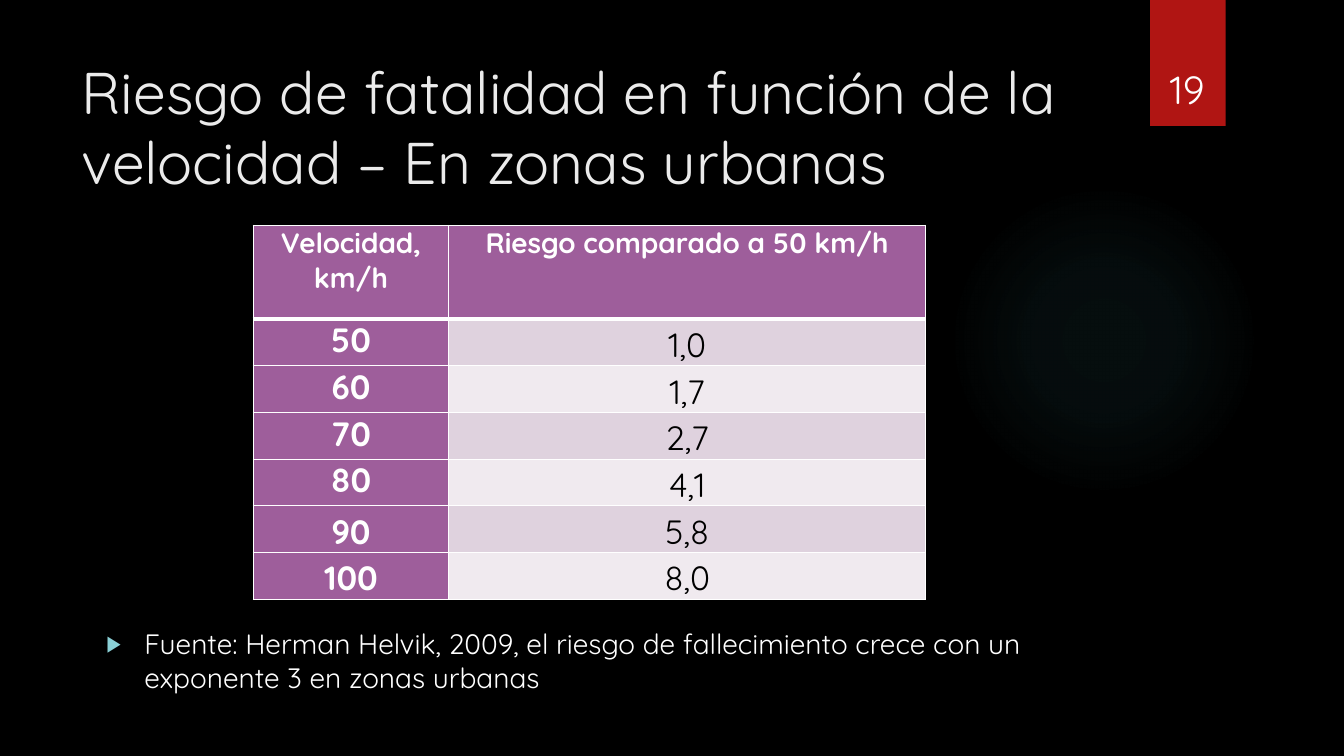
from dataclasses import dataclass

import pptx
import pptx.dml.color
import pptx.enum.shapes
import pptx.enum.text
import pptx.oxml
import pptx.oxml.ns
import pptx.util
from lxml import etree

Pt = pptx.util.Pt
RGBColor = pptx.dml.color.RGBColor
Anchor = pptx.enum.text.MSO_ANCHOR
Align = pptx.enum.text.PP_ALIGN
Shape = pptx.enum.shapes.MSO_SHAPE
qn = pptx.oxml.ns.qn

FONT = "Quicksand"
BLACK = RGBColor(0x00, 0x00, 0x00)
WHITE = RGBColor(0xFF, 0xFF, 0xFF)
OFF_WHITE = RGBColor(0xEB, 0xEB, 0xEB)
RED = RGBColor(0xB0, 0x15, 0x13)
TEAL = RGBColor(0x50, 0xB9, 0xC1)
BULLET_BLUE = RGBColor(0x8A, 0xD0, 0xD6)
PURPLE = RGBColor(0x9E, 0x5E, 0x9B)
BANDS = (RGBColor(0xDF, 0xD2, 0xDE), RGBColor(0xF0, 0xEA, 0xEF))

HEADINGS = ("Velocidad, km/h", "Riesgo comparado a 50 km/h")
RISKS = (("50", "1,0"), ("60", "1,7"), ("70", "2,7"),
         ("80", "4,1"), ("90", "5,8"), ("100", "8,0"))
COLUMN_WIDTHS = (139.7, 340.6)
HEADER_HEIGHT, ROW_HEIGHT = 67, 33.36
FIRST_BOTTOM_ROW = 5  # from here on the speeds also sit at the cell bottom
GLOW_STOPS = ((0, 7), (36, 6), (69, 0))  # position and opacity, percent


@dataclass(frozen=True)
class Frame:
    left: float
    top: float
    width: float
    height: float

    def lengths(self) -> tuple:
        return Pt(self.left), Pt(self.top), Pt(self.width), Pt(self.height)


@dataclass(frozen=True)
class Label:
    text: str
    size: float
    color: RGBColor = WHITE
    bold: bool = False
    align: Align = Align.LEFT


@dataclass(frozen=True)
class CellLook:
    fill: RGBColor
    top_line: float
    bottom_line: float
    at_bottom: bool


def write(text_frame, label: Label) -> None:
    text_frame.text = label.text
    para = text_frame.paragraphs[0]
    para.alignment = label.align
    font = para.runs[0].font
    font.name, font.size, font.bold = FONT, Pt(label.size), label.bold
    font.color.rgb = label.color


def add_text(page, frame: Frame, label: Label, anchor: Anchor = Anchor.TOP):
    box = page.shapes.add_textbox(*frame.lengths())
    box.text_frame.word_wrap = True
    box.text_frame.vertical_anchor = anchor
    write(box.text_frame, label)
    return box


def add_plain_shape(page, kind: Shape, frame: Frame):
    shape = page.shapes.add_shape(kind, *frame.lengths())
    shape.shadow.inherit = False
    shape.line.fill.background()
    return shape


def add_glow(page, frame: Frame) -> None:
    """Ellipse with a radial fill that fades out."""
    glow = add_plain_shape(page, Shape.OVAL, frame)
    stops = "".join(
        f'<a:gs pos="{position * 1000}"><a:srgbClr val="{TEAL}">'
        f'<a:alpha val="{opacity * 1000}"/></a:srgbClr></a:gs>'
        for position, opacity in GLOW_STOPS)
    gradient = pptx.oxml.parse_xml(
        f'<a:gradFill {pptx.oxml.ns.nsdecls("a")} rotWithShape="1">'
        f'<a:gsLst>{stops}</a:gsLst><a:path path="circle">'
        '<a:fillToRect l="50000" t="50000" r="50000" b="50000"/>'
        '</a:path></a:gradFill>')
    glow.element.spPr.find(qn("a:prstGeom")).addnext(gradient)


def add_bullet(para, indent: float) -> None:
    properties = para._p.get_or_add_pPr()
    properties.set("marL", str(int(Pt(indent))))
    properties.set("indent", str(int(Pt(-indent))))
    color = etree.SubElement(properties, qn("a:buClr"))
    etree.SubElement(color, qn("a:srgbClr"), val=str(BULLET_BLUE))
    etree.SubElement(properties, qn("a:buSzPct"), val="80000")
    etree.SubElement(properties, qn("a:buFont"), typeface="Arial")
    etree.SubElement(properties, qn("a:buChar"), char="▶")


def style_cell(cell, look: CellLook) -> None:
    side, top = (0.72, 0.72) if look.at_bottom else (5, 0)
    cell.margin_left = cell.margin_right = Pt(side)
    cell.margin_top, cell.margin_bottom = Pt(top), Pt(0)
    cell.vertical_anchor = Anchor.BOTTOM if look.at_bottom else Anchor.TOP
    properties = cell._tc.get_or_add_tcPr()
    for edge, width in (("L", 1), ("R", 1), ("T", look.top_line), ("B", look.bottom_line)):
        line = etree.SubElement(properties, qn(f"a:ln{edge}"), w=str(int(Pt(width))))
        fill = etree.SubElement(line, qn("a:solidFill"))
        etree.SubElement(fill, qn("a:srgbClr"), val=str(WHITE))
    cell.fill.solid()
    cell.fill.fore_color.rgb = look.fill


def add_risk_table(page, left: float, top: float) -> None:
    rows = (HEADINGS, *RISKS)
    frame = Frame(left, top, sum(COLUMN_WIDTHS), HEADER_HEIGHT + ROW_HEIGHT * len(RISKS))
    table = page.shapes.add_table(len(rows), len(HEADINGS), *frame.lengths()).table
    table.first_row = table.horz_banding = False
    for column, width in zip(table.columns, COLUMN_WIDTHS):
        column.width = Pt(width)
    for r, values in enumerate(rows):
        is_header = r == 0
        table.rows[r].height = Pt(HEADER_HEIGHT if is_header else ROW_HEIGHT)
        for c, value in enumerate(values):
            is_risk = c == 1 and not is_header
            cell = table.cell(r, c)
            write(cell.text_frame, Label(value, 20 if is_header else 24,
                                         BLACK if is_risk else WHITE,
                                         not is_risk, Align.CENTER))
            style_cell(cell, CellLook(
                fill=BANDS[(r - 1) % 2] if is_risk else PURPLE,
                top_line=3 if r == 1 else 1,
                bottom_line=3 if is_header else 1,
                at_bottom=is_risk or r >= FIRST_BOTTOM_ROW))


def main() -> None:
    deck = pptx.Presentation()
    deck.slide_width, deck.slide_height = Pt(960), Pt(540)
    page = deck.slides.add_slide(deck.slide_layouts[6])
    page.background.fill.solid()
    page.background.fill.fore_color.rgb = BLACK

    add_glow(page, Frame(677.5, 131.8, 221.8, 221.8))
    ribbon = add_plain_shape(page, Shape.RECTANGLE, Frame(821.5, 0, 54, 90))
    ribbon.fill.solid()
    ribbon.fill.fore_color.rgb = RED

    add_text(page, Frame(51, 36, 741, 110),
             Label("Riesgo de fatalidad en función de la velocidad – En zonas urbanas",
                   42, OFF_WHITE))
    add_risk_table(page, 180.9, 161)
    add_text(page, Frame(815, 23, 66.2, 60.5),
             Label("19", 28, align=Align.CENTER), Anchor.BOTTOM)
    source = add_text(page, Frame(69, 444.2, 704, 195.8),
                      Label("Fuente: Herman Helvik, 2009, el riesgo de fallecimiento crece "
                            "con un exponente 3 en zonas urbanas", 20))
    add_bullet(source.text_frame.paragraphs[0], 27)

    deck.save("out.pptx")


if __name__ == "__main__":
    main()
